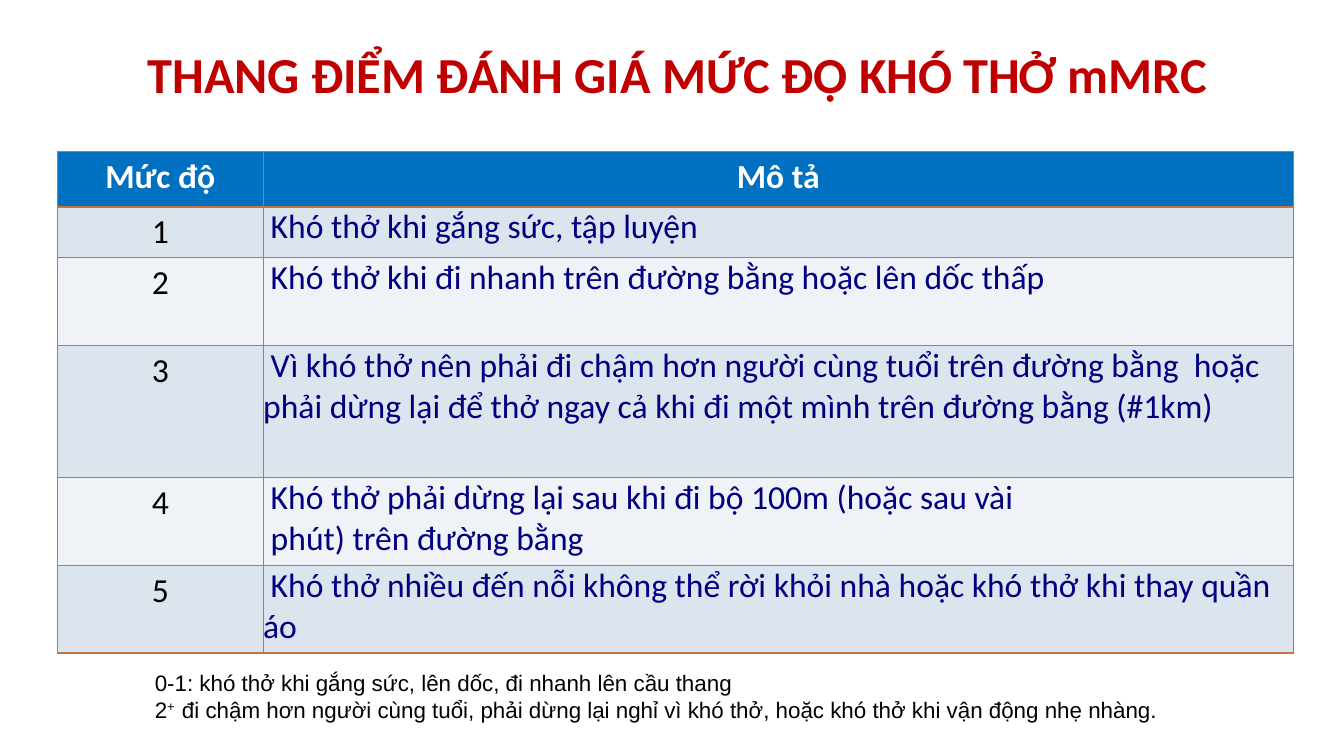
from dataclasses import dataclass

from lxml import etree
from pptx import Presentation
from pptx.dml.color import RGBColor
from pptx.enum import text
from pptx.oxml import ns
from pptx.util import Pt


@dataclass(frozen=True)
class Theme:
    heading_font: str = "Calibri"
    note_font: str = "Arial"
    title_size: int = 36
    table_size: int = 24
    note_size: int = 16
    title: str = "C00000"
    header_text: str = "FFFFFF"
    header_fill: str = "0070C0"
    body: str = "000000"
    description: str = "000080"
    bands: tuple = ("DCE5EE", "EFF3F7")
    border: str = "C8733F"


THEME = Theme()

TITLE = "THANG ĐIỂM ĐÁNH GIÁ MỨC ĐỘ KHÓ THỞ mMRC"
HEADERS = ("Mức độ", "Mô tả")
DESCRIPTIONS = (
    " Khó thở khi gắng sức, tập luyện",
    " Khó thở khi đi nhanh trên đường bằng hoặc lên dốc thấp",
    " Vì khó thở nên phải đi chậm hơn người cùng tuổi trên đường bằng  hoặc "
    "phải dừng lại để thở ngay cả khi đi một mình trên đường bằng (#1km)",
    " Khó thở phải dừng lại sau khi đi bộ 100m (hoặc sau vài\n phút) trên đường bằng",
    " Khó thở nhiều đến nỗi không thể rời khỏi nhà hoặc khó thở khi thay quần áo",
)
NOTES = (
    (("0-1: khó thở khi gắng sức, lên dốc, đi nhanh lên cầu thang", False),),
    (
        ("2", False),
        ("+  ", True),
        ("đi chậm hơn người cùng tuổi, phải dừng lại nghỉ vì khó thở, "
         "hoặc khó thở khi vận động nhẹ nhàng.", False),
    ),
)
COLUMN_WIDTHS = (147, 736)
ROW_HEIGHTS = (39.5, 36, 62.8, 94.3, 62.8, 62.8)


def style_font(para, name, size, color, bold=False):
    para.font.name = name
    para.font.size = Pt(size)
    para.font.bold = bold
    para.font.color.rgb = RGBColor.from_string(color)


def add_text_frame(page, box):
    frame = page.shapes.add_textbox(*map(Pt, box)).text_frame
    frame.word_wrap = True
    return frame


def add_title(page, box):
    para = add_text_frame(page, box).paragraphs[0]
    para.text = TITLE
    para.alignment = text.PP_ALIGN.CENTER
    style_font(para, THEME.heading_font, THEME.title_size, THEME.title, True)


def add_borders(cell):
    properties = cell._tc.get_or_add_tcPr()
    for side in ("lnL", "lnR", "lnT", "lnB"):
        line = etree.SubElement(properties, ns.qn(f"a:{side}"), w=str(Pt(1)))
        fill = etree.SubElement(line, ns.qn("a:solidFill"))
        etree.SubElement(fill, ns.qn("a:srgbClr"), val=THEME.border)


def fill_cell(cell, wording, fill, color, bold=False, centered=True):
    add_borders(cell)
    cell.fill.solid()
    cell.fill.fore_color.rgb = RGBColor.from_string(fill)
    cell.margin_left = cell.margin_right = Pt(9.4 if centered else 0)
    cell.margin_top = cell.margin_bottom = Pt(3.6 if centered else 0)
    cell.text_frame.text = wording
    for para in cell.text_frame.paragraphs:
        if centered:
            para.alignment = text.PP_ALIGN.CENTER
        style_font(para, THEME.heading_font, THEME.table_size, color, bold)


def add_scale_table(page, left, top):
    box = (left, top, sum(COLUMN_WIDTHS), sum(ROW_HEIGHTS))
    table = page.shapes.add_table(
        len(ROW_HEIGHTS), len(COLUMN_WIDTHS), *map(Pt, box)).table
    table.first_row = table.horz_banding = False
    for column, width in zip(table.columns, COLUMN_WIDTHS):
        column.width = Pt(width)
    for row, height in zip(table.rows, ROW_HEIGHTS):
        row.height = Pt(height)
    for index, header in enumerate(HEADERS):
        fill_cell(table.cell(0, index), header, THEME.header_fill,
                  THEME.header_text, bold=True)
    for grade, description in enumerate(DESCRIPTIONS, 1):
        band = THEME.bands[(grade - 1) % 2]
        fill_cell(table.cell(grade, 0), str(grade), band, THEME.body)
        fill_cell(table.cell(grade, 1), description, band,
                  THEME.description, centered=False)


def add_notes(page, box):
    frame = add_text_frame(page, box)
    for index, spans in enumerate(NOTES):
        para = frame.add_paragraph() if index else frame.paragraphs[0]
        para.level = 1
        properties = para._p.get_or_add_pPr()
        properties.set("marL", str(Pt(36)))
        properties.set("indent", "0")
        style_font(para, THEME.note_font, THEME.note_size, THEME.body)
        for wording, raised in spans:
            span = para.add_run()
            span.text = wording
            if raised:
                span._r.get_or_add_rPr().set("baseline", "30000")


def main():
    deck = Presentation()
    deck.slide_width, deck.slide_height = Pt(960), Pt(540)
    page = deck.slides.add_slide(deck.slide_layouts[6])
    add_title(page, (16, 27.5, 936, 51))
    add_scale_table(page, 41, 108.3)
    add_notes(page, (67.5, 474.5, 840, 46))
    deck.save("out.pptx")


if __name__ == "__main__":
    main()
